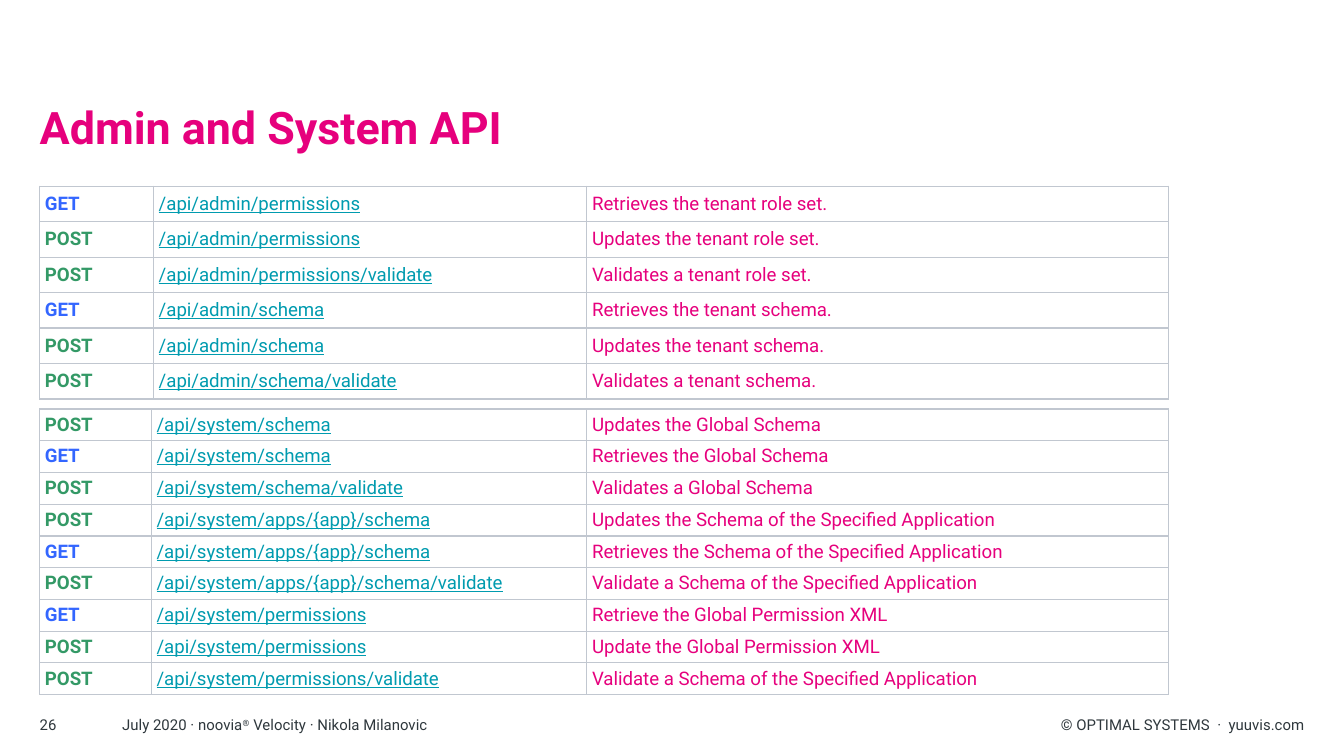
from lxml.etree import SubElement
from pptx import Presentation
from pptx.dml.color import RGBColor
from pptx.enum.text import MSO_ANCHOR as ANCHOR, PP_ALIGN as ALIGN
from pptx.oxml.ns import qn
from pptx.util import Cm, Pt

PINK, TEAL, GREY, BORDER = "E6007D", "009BAF", "2E373C", "C1C7D0"
METHOD_COLORS = {"GET": "3366FF", "POST": "339966"}


def rgb(value):
    return RGBColor.from_string(value)


def add_text(p, text, size=8, color=GREY, bold=False, underline=False, baseline=0):
    r = p.add_run()
    r.text = text
    r.font.name = "Roboto"
    r.font.size = Pt(size)
    r.font.bold = bold
    r.font.underline = underline
    r.font.color.rgb = rgb(color)
    if baseline:
        r.font._element.set("baseline", str(baseline * 1000))


prs = Presentation()
prs.slide_width, prs.slide_height = Cm(25.4), Cm(14.29)
s = prs.slides.add_slide(prs.slide_layouts[6])

# Title and footer: left, top, width, height, alignment, runs
footer_top, footer_height = 13.36, 0.51
boxes = [
    (0.75, 0.74, 21.34, 2.18, ALIGN.LEFT,
     [("Admin and System API", dict(size=24, color=PINK, bold=True))]),
    (0.75, footer_top, 1, footer_height, ALIGN.LEFT, [("26", {})]),
    (2.31, footer_top, 17, footer_height, ALIGN.LEFT,
     [("July 2020 · noovia", {}), ("®", dict(baseline=30)),
      (" Velocity · Nikola Milanovic", {})]),
    (19.66, footer_top, 5, footer_height, ALIGN.RIGHT,
     [("© OPTIMAL SYSTEMS\u00a0 ·\u00a0 yuuvis.com", {})]),
]
for left, top, width, height, align, runs in boxes:
    tf = s.shapes.add_textbox(Cm(left), Cm(top), Cm(width), Cm(height)).text_frame
    tf.margin_left = tf.margin_right = tf.margin_top = tf.margin_bottom = 0
    tf.word_wrap = True
    tf.vertical_anchor = ANCHOR.BOTTOM
    p = tf.paragraphs[0]
    p.alignment = align
    if top < footer_top:
        p.line_spacing = 0.9
    for text, fmt in runs:
        add_text(p, text, **fmt)

# Endpoints: method, path below the API root, description
admin_rows = [
    ("GET", "permissions", "Retrieves the tenant role set."),
    ("POST", "permissions", "Updates the tenant role set."),
    ("POST", "permissions/validate", "Validates a tenant role set."),
    ("GET", "schema", "Retrieves the tenant schema."),
    ("POST", "schema", "Updates the tenant schema."),
    ("POST", "schema/validate", "Validates a tenant schema."),
]
system_rows = [
    ("POST", "schema", "Updates the Global Schema"),
    ("GET", "schema", "Retrieves the Global Schema"),
    ("POST", "schema/validate", "Validates a Global Schema"),
    ("POST", "apps/{app}/schema", "Updates the Schema of the Specified Application"),
    ("GET", "apps/{app}/schema", "Retrieves the Schema of the Specified Application"),
    ("POST", "apps/{app}/schema/validate", "Validate a Schema of the Specified Application"),
    ("GET", "permissions", "Retrieve the Global Permission XML"),
    ("POST", "permissions", "Update the Global Permission XML"),
    ("POST", "permissions/validate", "Validate a Schema of the Specified Application"),
]

# Tables: API root, rows, top, row height, column widths
tables = [
    ("/api/system/", system_rows, 7.73, 0.6, (2.11, 8.23, 11)),
    ("/api/admin/", admin_rows, 3.52, 0.67, (2.15, 8.19, 11)),
]
for root, rows, top, row_height, widths in tables:
    table = s.shapes.add_table(len(rows), 3, Cm(0.75), Cm(top), Cm(sum(widths)),
                               Cm(row_height * len(rows))).table
    table.first_row = table.horz_banding = False
    for column, width in zip(table.columns, widths):
        column.width = Cm(width)
    for i, (method, endpoint, description) in enumerate(rows):
        table.rows[i].height = Cm(row_height)
        contents = [
            (method, dict(color=METHOD_COLORS[method], bold=True)),
            (root + endpoint, dict(color=TEAL, underline=True)),
            (description, dict(color=PINK)),
        ]
        for cell, (text, fmt) in zip(table.rows[i].cells, contents):
            cell.margin_left = cell.margin_right = Cm(0.1)
            cell.margin_top = cell.margin_bottom = 0
            cell.vertical_anchor = ANCHOR.MIDDLE
            add_text(cell.text_frame.paragraphs[0], text, size=10, **fmt)
            # Borders go before the fill in the cell properties
            tcPr = cell._tc.get_or_add_tcPr()
            for side in ("lnL", "lnR", "lnT", "lnB"):
                ln = SubElement(tcPr, qn(f"a:{side}"), w=str(Pt(0.75)))
                line_fill = SubElement(ln, qn("a:solidFill"))
                SubElement(line_fill, qn("a:srgbClr"), val=BORDER)
            cell.fill.solid()
            cell.fill.fore_color.rgb = rgb("FFFFFF")

prs.save("out.pptx")
